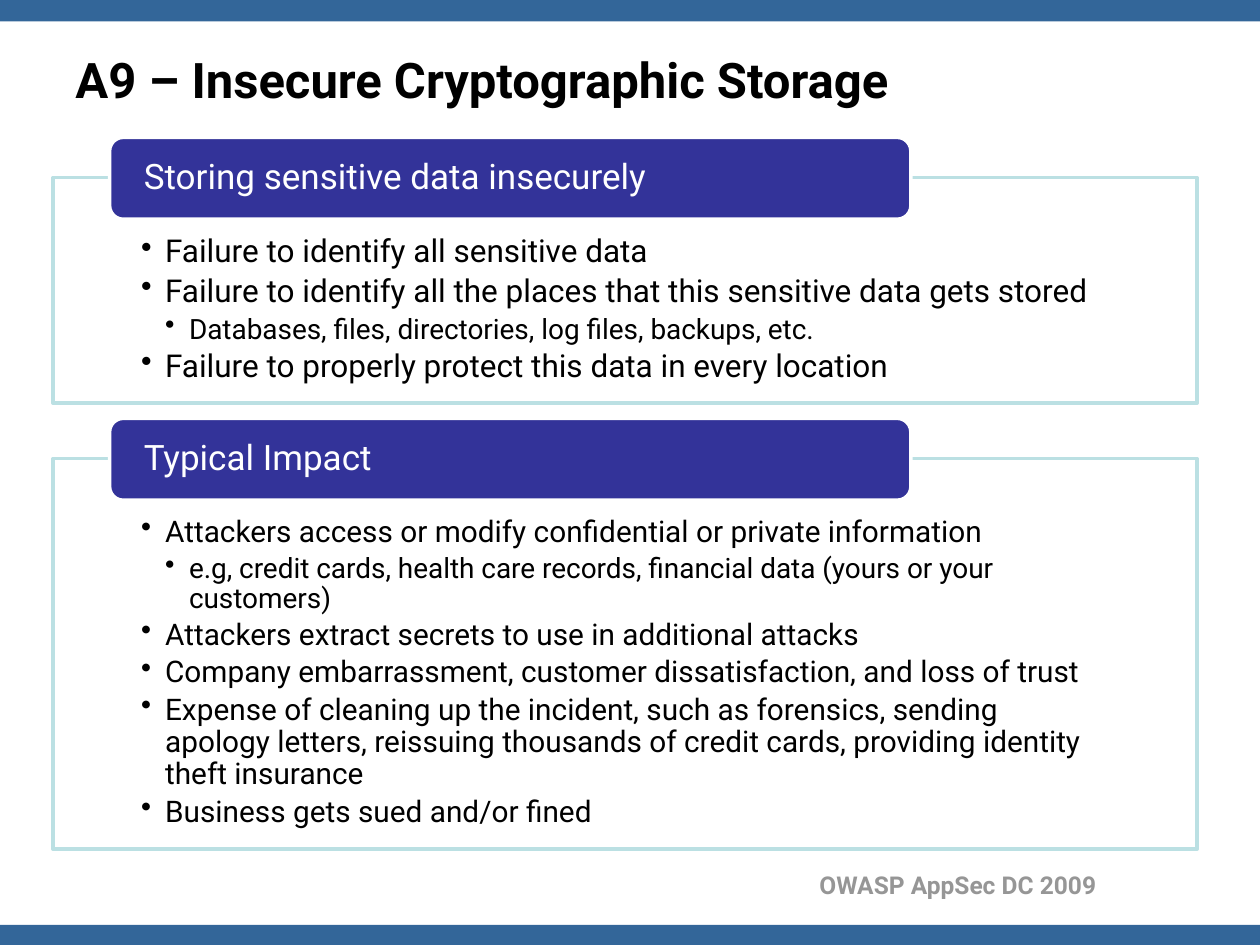
from dataclasses import dataclass

from lxml.etree import SubElement
from pptx import Presentation
from pptx.dml.color import RGBColor
from pptx.enum.shapes import MSO_SHAPE
from pptx.enum.text import MSO_ANCHOR, PP_ALIGN
from pptx.oxml.ns import qn
from pptx.util import Inches, Pt


@dataclass(frozen=True)
class Theme:
    font: str = "Roboto"
    band: RGBColor = RGBColor(0x33, 0x66, 0x99)
    header: RGBColor = RGBColor(0x33, 0x33, 0x99)
    border: RGBColor = RGBColor(0xBB, 0xE0, 0xE3)
    white: RGBColor = RGBColor(0xFF, 0xFF, 0xFF)
    black: RGBColor = RGBColor(0, 0, 0)
    gray: RGBColor = RGBColor(0x96, 0x96, 0x96)
    title_size: int = 28
    header_size: int = 20
    detail_size: int = 16
    footer_size: int = 14


theme = Theme()


def add_shape(kind, left, top, width, height, fill, line=None):
    shape = page.shapes.add_shape(kind, Inches(left), Inches(top), Inches(width), Inches(height))
    shape.shadow.inherit = False
    shape.fill.solid()
    shape.fill.fore_color.rgb = fill
    if line is None:
        shape.line.fill.background()
    else:
        shape.line.color.rgb = line
        shape.line.width = Pt(2)
    return shape


def write(text, para, size, color=theme.black, bold=False, align=PP_ALIGN.LEFT,
          level=0, line_spacing=None, space_after=None):
    para.alignment = align
    para.level = level
    para.line_spacing = line_spacing
    para.space_after = space_after
    if level:
        properties = para._p.get_or_add_pPr()
        properties.set("marL", str(Inches(0.19 * level)))
        properties.set("indent", str(Inches(-0.19)))
        SubElement(properties, qn("a:buChar"), char="•")
    span = para.add_run()
    span.text = text
    span.font.name = theme.font
    span.font.size = Pt(size)
    span.font.bold = bold
    span.font.color.rgb = color


deck = Presentation()
deck.slide_width = Inches(10)
deck.slide_height = Inches(7.5)
page = deck.slides.add_slide(deck.slide_layouts[6])

for top in (0, 7.34):
    add_shape(MSO_SHAPE.RECTANGLE, 0, top, 10, 0.17, theme.band)

footer = page.shapes.add_textbox(Inches(5.42), Inches(6.86), Inches(3.38), Inches(0.34))
footer.text_frame.word_wrap = True
write("OWASP AppSec DC 2009", footer.text_frame.paragraphs[0], size=theme.footer_size,
      color=theme.gray, bold=True, align=PP_ALIGN.RIGHT)

title = page.shapes.add_textbox(Inches(0.5), Inches(0.19), Inches(9), Inches(0.87))
title.text_frame.word_wrap = True
title.text_frame.vertical_anchor = MSO_ANCHOR.MIDDLE
write("A9 – Insecure Cryptographic Storage", title.text_frame.paragraphs[0],
      size=theme.title_size, bold=True)

sections = [
    ("Storing sensitive data insecurely", 1.41, 1.79, 18, [
        (1, "Failure to identify all sensitive data"),
        (1, "Failure to identify all the places that this sensitive data gets stored"),
        (2, "Databases, files, directories, log files, backups, etc."),
        (1, "Failure to properly protect this data in every location"),
    ]),
    ("Typical Impact", 3.64, 3.1, 17, [
        (1, "Attackers access or modify confidential or private information"),
        (2, "e.g, credit cards, health care records, financial data (yours or your customers)"),
        (1, "Attackers extract secrets to use in additional attacks"),
        (1, "Company embarrassment, customer dissatisfaction, and loss of trust"),
        (1, "Expense of cleaning up the incident, such as forensics, sending apology letters, "
            "reissuing thousands of credit cards, providing identity theft insurance"),
        (1, "Business gets sued and/or fined"),
    ]),
]

for heading, top, height, point_size, points in sections:
    panel = add_shape(MSO_SHAPE.RECTANGLE, 0.42, top, 9.08, height, theme.white, theme.border)
    panel_color = panel._element.xpath("./p:spPr/a:solidFill/a:srgbClr")[0]
    SubElement(panel_color, qn("a:alpha"), val="90000")
    frame = panel.text_frame
    frame.word_wrap = True
    frame.vertical_anchor = MSO_ANCHOR.TOP
    frame.margin_left = frame.margin_right = Inches(0.7)
    frame.margin_top = Inches(0.46)
    frame.margin_bottom = Inches(0.12)
    for index, (level, text) in enumerate(points):
        para = frame.add_paragraph() if index else frame.paragraphs[0]
        size = point_size if level == 1 else theme.detail_size
        write(text, para, size=size, level=level, line_spacing=0.9, space_after=Pt(0.18 * size))

    header = add_shape(MSO_SHAPE.ROUNDED_RECTANGLE, 0.87, top - 0.32, 6.36, 0.65,
                       theme.header, theme.white)
    frame = header.text_frame
    frame.word_wrap = True
    frame.vertical_anchor = MSO_ANCHOR.MIDDLE
    frame.margin_left = frame.margin_right = Inches(0.24)
    frame.margin_top = frame.margin_bottom = 0
    write(heading, frame.paragraphs[0], size=theme.header_size, color=theme.white,
          line_spacing=0.9)

deck.save("out.pptx")
